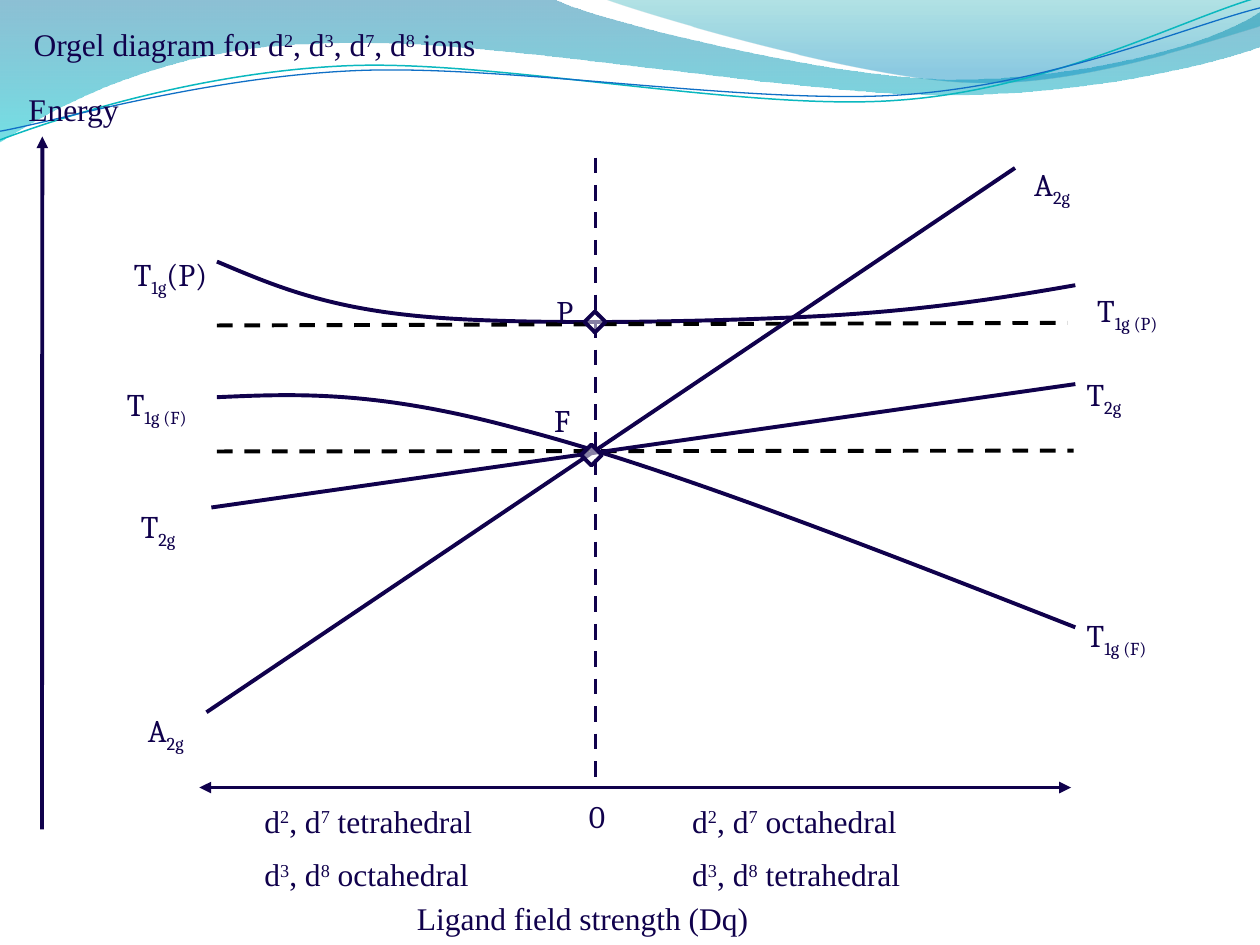
from lxml import etree
from pptx import Presentation
from pptx.dml.color import RGBColor
from pptx.enum.dml import MSO_LINE
from pptx.enum.shapes import MSO_CONNECTOR, MSO_SHAPE
from pptx.enum.text import MSO_ANCHOR, MSO_AUTO_SIZE, PP_ALIGN
from pptx.oxml.ns import qn
from pptx.util import Pt

rgb = RGBColor.from_string
NAVY, BLACK, WHITE = "10014C", "000000", "FFFFFF"
SERIF, CAMBRIA = "Times New Roman", "Cambria"
BASELINES = {"^": "30000", "_": "-25000"}


def write_text(frame, *lines, font=SERIF, size=18, color=NAVY, align=PP_ALIGN.LEFT,
               spacing=1.0, inset=7.2, wrap=True, tab=None):
    """Fill a frame; '|' separates runs, '^' raises a run and '_' lowers it."""
    frame.word_wrap = wrap
    frame.auto_size = MSO_AUTO_SIZE.SHAPE_TO_FIT_TEXT
    frame.vertical_anchor = MSO_ANCHOR.TOP
    frame.margin_left = Pt(inset)
    for number, line in enumerate(lines):
        paragraph = frame.add_paragraph() if number else frame.paragraphs[0]
        paragraph.alignment = align
        paragraph.line_spacing = spacing
        paragraph.space_before = Pt(9 if number else 0)
        if tab:
            stops = etree.SubElement(paragraph._p.get_or_add_pPr(), qn("a:tabLst"))
            etree.SubElement(stops, qn("a:tab"), pos=str(Pt(tab)), algn="l")
        for part in line.split("|"):
            run = paragraph.add_run()
            run.text = part.lstrip("^_")
            run.font.name, run.font.size = font, Pt(size)
            run.font.color.rgb = rgb(color)
            if part[0] in BASELINES:
                run._r.get_or_add_rPr().set("baseline", BASELINES[part[0]])


def add_alpha(shape, *percents):
    """Set the opacity of the shape's fill colours, in order."""
    for color, percent in zip(shape.element.iter(qn("a:srgbClr")), percents):
        etree.SubElement(color, qn("a:alpha"), val=str(percent * 1000))


prs = Presentation()
prs.slide_width, prs.slide_height = Pt(720), Pt(540)
slide = prs.slides.add_slide(prs.slide_layouts[5])
shapes = slide.shapes

# Curves: start, segments (2 numbers = straight, 6 = cubic), line, gradient stops, rotation
curves = [
    ((0, 0), [(317, -0.5), (343, 12, 478, 45, 546, 45), (614, 45, 690, 27, 720, 6.5),
              (721, 26), (708, 32, 626, 55, 537, 54), (448, 54, 275, 20, 185, 24.5),
              (93, 26, 33, 60, -1, 81.5)],
     None, [(0, "0074A1", 45), (1, "00C6CF", 55)], 0),
    ((345, -0.5), [(367, 8, 491, 45, 554, 47), (616, 50, 692, 23, 720, 15), (720, 0)],
     None, [(0, "00A1A9", 30), (0.8, "008BBF", 45)], 0),
    ((-1.5, 63), [(34, 51.5, 114.5, 29.5, 199.5, 30), (284.5, 30.5, 426, 67, 512, 64.5),
                  (599.5, 62.5, 676, 26, 720.5, 15.5)], ("0AB8BF", 0.85), None, -2.7),
    ((-1, 58), [(33, 53.5, 118, 32.5, 204.5, 33), (290.5, 33.5, 429, 63.5, 515.5, 61.5),
                (601.5, 59.5, 679, 30, 721.5, 21.5)], ("0F6FC6", 0.75), None, -2.7),
    ((124, 227), [(169, 225, 215, 223, 296, 245), (378, 266, 496, 312, 614.5, 358.5)],
     (NAVY, 2.25), None, 0),
    ((124, 149.5), [(156, 163, 186, 176, 243, 181), (300, 186, 400, 184, 462, 181),
                    (523, 178, 569, 171, 614.5, 163)], (NAVY, 2.25), None, 0),
]
for start, segments, line, stops, rotation in curves:
    points = [(Pt(x), Pt(y)) for segment in segments
              for x, y in zip(segment[::2], segment[1::2])]
    builder = shapes.build_freeform(Pt(start[0]), Pt(start[1]))
    builder.add_line_segments(points, close=bool(stops))
    curve = builder.convert_to_shape()
    steps = iter(list(curve.element.iter(qn("a:lnTo"))))
    for segment in segments:
        first = next(steps)
        if len(segment) == 6:
            first.tag = qn("a:cubicBezTo")
            for step in (next(steps), next(steps)):
                first.append(step[0])
                step.getparent().remove(step)
    curve.rotation = rotation
    curve.shadow.inherit = False
    if stops:
        curve.fill.gradient()
        curve.fill.gradient_angle = 270
        for stop, (position, color, _) in zip(curve.fill.gradient_stops, stops):
            stop.position, stop.color.rgb = position, rgb(color)
        add_alpha(curve, *[opacity for _, _, opacity in stops])
        curve.line.fill.background()
    else:
        curve.fill.background()
        curve.line.color.rgb, curve.line.width = rgb(line[0]), Pt(line[1])

# Straight lines: ends, colour, dashed, arrowheads
straight_lines = [
    ((124, 186, 610, 184.5), BLACK, True, ()),
    ((124, 258, 613.5, 257.5), BLACK, True, ()),
    ((24, 474, 24.2, 78), NAVY, False, ("tailEnd",)),
    ((118, 407, 580, 96), NAVY, False, ()),
    ((120.8, 290, 614.5, 219.5), NAVY, False, ()),
    ((340.3, 90, 340.3, 450.5), NAVY, True, ()),
    ((114, 450, 612, 450), NAVY, False, ("headEnd", "tailEnd")),
]
for ends, color, dashed, arrowheads in straight_lines:
    connector = shapes.add_connector(MSO_CONNECTOR.STRAIGHT, *map(Pt, ends))
    connector.line.color.rgb, connector.line.width = rgb(color), Pt(2.25)
    if dashed:
        connector.line.dash_style = MSO_LINE.DASH
    for end in arrowheads:
        etree.SubElement(connector.line._get_or_add_ln(), qn(f"a:{end}"), type="triangle")
    etree.SubElement(connector.element.spPr, qn("a:effectLst"))

for left, top in [(334, 178), (332, 254)]:
    free_ion = shapes.add_shape(MSO_SHAPE.DIAMOND, Pt(left), Pt(top), Pt(12), Pt(12))
    free_ion.shadow.inherit = False
    free_ion.fill.solid()
    free_ion.fill.fore_color.rgb = rgb(WHITE)
    add_alpha(free_ion, 50)
    free_ion.line.color.rgb, free_ion.line.width = rgb(NAVY), Pt(2.25)

term = dict(font=CAMBRIA, spacing=2.0)
labels = [
    ((309.5, 204, 34.5, 50), ["F"], term),
    ((307.5, 142, 34.5, 51), ["P"], dict(term, inset=10.5)),
    ((579.5, 66, 114, 51), ["A|_2g"], dict(term, inset=11.5)),
    ((610, 186, 114, 45), ["T|_2g"], dict(term, inset=11)),
    ((610, 324, 90, 51), ["T|_1g (F)"], dict(term, inset=11)),
    ((615.5, 138, 111.5, 51), ["T|_1g (P)"], dict(term, inset=11.5)),
    ((42, 117.5, 111.5, 45), ["T|_1g|(P)"], dict(term, inset=34.5)),
    ((46, 192, 90, 51), ["T|_1g (F)"], dict(term, inset=26.5)),
    ((46, 261.5, 114, 51), ["T|_2g"], dict(term, inset=34.5)),
    ((46, 378, 114, 51), ["A|_2g"], dict(term, inset=38.5)),
    ((188, 516, 290, 22.5), ["Ligand field strength (Dq)"],
     dict(align=PP_ALIGN.CENTER, spacing=0.7)),
    ((0, 54, 84, 22.5), ["Energy"], dict(align=PP_ALIGN.CENTER, spacing=0.7)),
    ((329.5, 458, 24.5, 22.5), ["0"], dict(font=CAMBRIA, spacing=0.7, wrap=False)),
    ((144, 454.5, 410.5, 61), ["d|^2|, d|^7| tetrahedral\td|^2|, d|^7| octahedral",
                               "d|^3|, d|^8| octahedral\td|^3|, d|^8| tetrahedral"],
     dict(tab=244.5)),
]
for box, lines, text_format in labels:
    write_text(shapes.add_textbox(*map(Pt, box)).text_frame, *lines, **text_format)

# The title has to stand in front of the wave band
title = shapes.title
title.left, title.top, title.width, title.height = Pt(12), Pt(0), Pt(342), Pt(39.5)
write_text(title.text_frame, "Orgel diagram for d|^2|, d|^3|, d|^7|, d|^8| ions",
           align=PP_ALIGN.JUSTIFY, spacing=1.5)
title.element.getparent().append(title.element)

prs.save("out.pptx")
